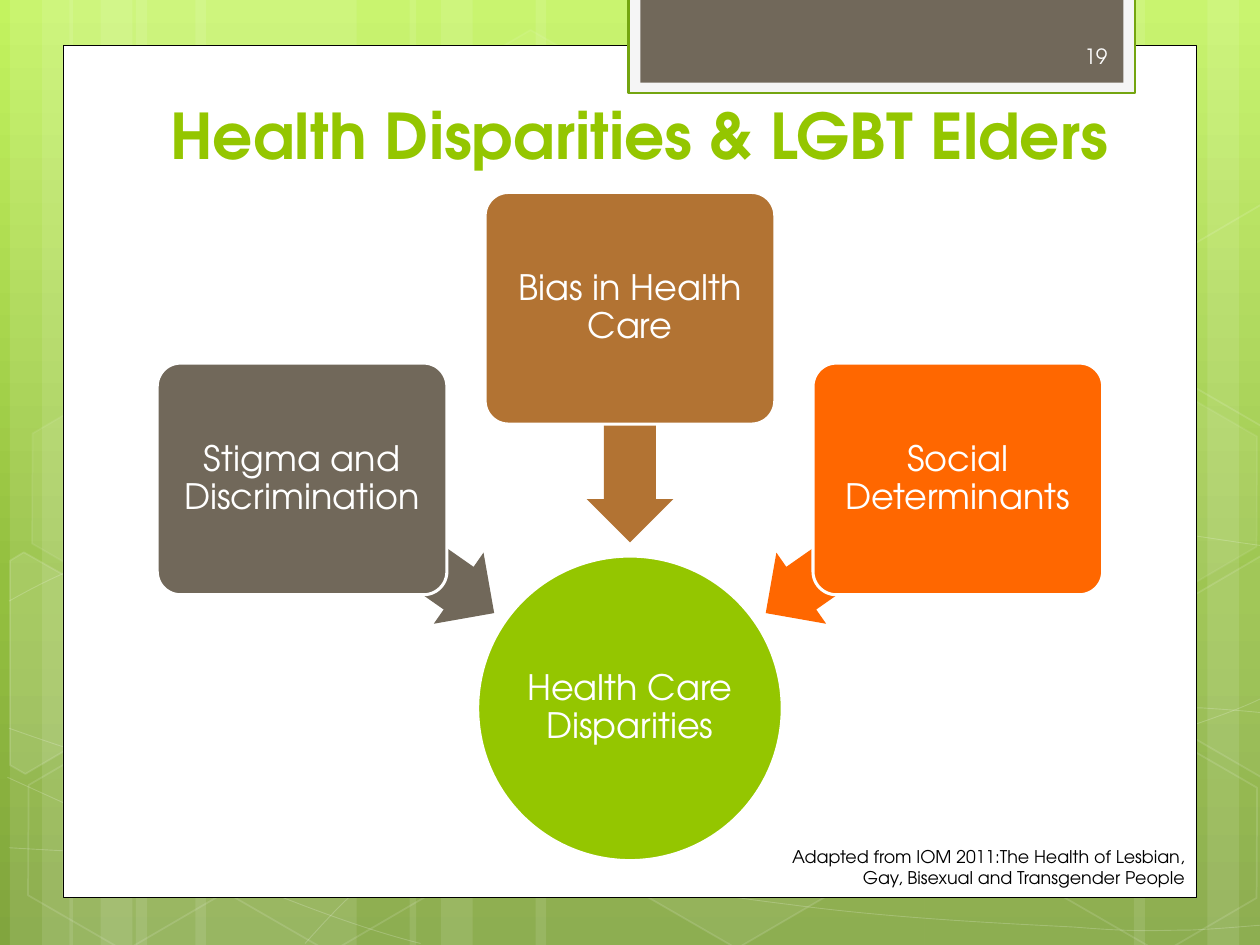
import copy
import math

import lxml.etree
import pptx
import pptx.dml.color
import pptx.enum.shapes
import pptx.enum.text
import pptx.oxml.ns
import pptx.util

Cm = pptx.util.Cm
Pt = pptx.util.Pt
SHAPE = pptx.enum.shapes.MSO_SHAPE
ALIGN = pptx.enum.text.PP_ALIGN
ANCHOR = pptx.enum.text.MSO_ANCHOR
qn = pptx.oxml.ns.qn

FONT = "TeX Gyre Adventor"
COLORS = {
    "white": "FFFFFF", "black": "000000", "number": "FEFEFE",
    "tab": "F5F5F5", "tab_line": "74A510", "green": "94C600",
    "taupe": "71685A", "brown": "B27333", "orange": "FF6700",
    "sky_top": "C3F35F", "sky_middle": "93BF3F", "sky_bottom": "81A53E",
}
WIDTH, HEIGHT, CENTER = 25.4, 19.05, 12.7
TILT = 30

# Left edge and width of each translucent vertical band
BANDS = [
    (2.74, 4.45), (0.2, 1.27), (0.85, 2.12), (3.94, 4.45), (1.4, 1.27), (2.03, 2.12),
    (18.63, 4.45), (24.34, 1.27), (22.86, 2.12), (10.8, 7.83), (8.26, 1.27), (8.89, 2.12),
]
# Bezier points: a start, then two controls and an end for each segment
CURVES = [
    [(0.18, 17.09), (1.55, 17.17), (2.92, 17.25), (4.83, 17.22), (6.73, 17.2),
     (9.09, 17.15), (11.63, 16.89), (14.17, 16.64), (17.78, 16.15), (20.12, 15.67),
     (22.43, 15.19), (24.82, 14.43), (25.58, 14)],
    [(0.18, 12.12), (0.91, 11.71), (1.65, 11.33), (3.07, 10.95), (4.52, 10.57),
     (6.58, 10.01), (8.81, 9.83), (11.07, 9.65), (13.82, 9.63), (16.61, 9.83),
     (19.41, 10.03), (24.05, 10.82), (25.58, 11.02)],
    [(0.15, 15.67), (3.23, 17.07), (6.27, 18.47), (8.48, 19.02)],
    [(0.18, 14.68), (0.97, 14.96), (1.78, 15.24), (3.25, 15.65), (4.72, 16.03),
     (6.93, 16.66), (9.07, 17.09), (11.18, 17.53), (13.84, 17.98), (15.95, 18.24),
     (18.06, 18.52), (20.32, 18.62), (21.67, 18.69), (22.99, 18.8), (23.34, 18.75),
     (24, 18.75), (24.66, 18.72), (25.12, 18.67), (25.58, 18.64)],
    [(6.15, 19.02), (6.6, 18.52), (7.06, 18.01), (7.67, 17.55), (8.28, 17.09),
     (9.14, 16.59), (9.86, 16.23), (10.57, 15.88), (11, 15.72), (11.94, 15.47),
     (12.85, 15.21), (14.55, 14.86), (15.44, 14.68), (16.36, 14.5), (16.48, 14.5),
     (17.27, 14.45), (18.06, 14.38), (19.3, 14.3), (20.17, 14.27), (21.06, 14.25),
     (22.5, 14.27), (22.5, 14.27), (23, 14.27), (23.6, 14.27), (24.21, 14.27),
     (24.66, 14.3), (25.1, 14.33), (25.55, 14.38)],
]
# Left, top, fill opacity and line opacity of each hexagon
HEXAGONS = [
    (8.48, 0.91, 4, 8), (12.62, 14.96, 6, 12), (0.28, 15.01, 0, 12),
    (0.36, 7.92, 7, 8), (4.42, 15.04, 0, 12), (19.13, 11.51, 10, 12),
    (21.18, 15.06, 0, 12), (21.18, 7.98, 7, 8),
]
# Hexagons cut by the slide's edge: corners, centre of rotation and fill opacity
LEFT_CUT = [(0.2, 11.3), (0.48, 11.13), (2.44, 12.24), (2.41, 14.48), (0.51, 15.6), (0.2, 15.42)]
RIGHT_CUT = [(23.52, 12.32), (25.43, 11.2), (25.63, 11.33), (25.63, 15.57),
             (25.45, 15.67), (23.52, 14.55)]
CUT_HEXAGONS = [
    (LEFT_CUT, (0.91, 13.59), 10),
    (RIGHT_CUT, (25.02, 13.21), 4),
    ([(x, y - 7.08) for x, y in RIGHT_CUT], (25.02, 6.13), 0),
]
# Column relative to the centre, box top, arrow top, colour and text of each cause
CAUSES = [
    (-1, 7.32, 10.13, "taupe", "Stigma and Discrimination"),
    (0, 3.88, 7.7, "brown", "Bias in Health Care"),
    (1, 7.32, 10.13, "orange", "Social Determinants"),
]


def rgb(name):
    return pptx.dml.color.RGBColor.from_string(COLORS[name])


def paint(fill, color, opacity=100):
    """Fill with a named colour; no colour or no opacity leaves it empty."""
    if not color or not opacity:
        fill.background()
        return
    fill.solid()
    fill.fore_color.rgb = rgb(color)
    if opacity < 100:
        color_element = fill._xPr.find(qn("a:solidFill"))[0]
        lxml.etree.SubElement(color_element, qn("a:alpha"), val=str(opacity * 1000))


def write(shape, text, size, color="white", bold=False, align=ALIGN.LEFT,
          anchor=ANCHOR.MIDDLE, spacing=None, margins=(0.25, 0.13, 0.25, 0.13)):
    frame = shape.text_frame
    frame.word_wrap = True
    frame.auto_size = pptx.enum.text.MSO_AUTO_SIZE.NONE
    frame.vertical_anchor = anchor
    (frame.margin_left, frame.margin_top,
     frame.margin_right, frame.margin_bottom) = map(Cm, margins)
    paragraph = frame.paragraphs[0]
    paragraph.alignment = align
    paragraph.line_spacing = spacing
    run = paragraph.add_run()
    run.text = text
    run.font.name, run.font.size, run.font.bold = FONT, Pt(size), bold
    run.font.color.rgb = rgb(color)


def turn(points, center, degrees):
    cosine, sine = math.cos(math.radians(degrees)), math.sin(math.radians(degrees))
    offsets = [(x - center[0], y - center[1]) for x, y in points]
    return [(center[0] + x * cosine - y * sine, center[1] + x * sine + y * cosine)
            for x, y in offsets]


class SlideBuilder:
    def __init__(self, presentation):
        self.slide = presentation.slides.add_slide(presentation.slide_layouts[5])

    def style(self, shape, fill, opacity, line, line_width, line_opacity, rotation=0):
        shape.shadow.inherit = False
        shape.rotation = rotation
        paint(shape.fill, fill, opacity)
        paint(shape.line.fill, line, line_opacity)
        if line:
            shape.line.width = Pt(line_width)
        return shape

    def shape(self, kind, left, top, width, height, fill, opacity=100, line=None,
              line_width=1, line_opacity=100, rotation=0, adjustments=()):
        shape = self.slide.shapes.add_shape(kind, Cm(left), Cm(top), Cm(width), Cm(height))
        for index, value in enumerate(adjustments):
            shape.adjustments[index] = value
        return self.style(shape, fill, opacity, line, line_width, line_opacity, rotation)

    def outline(self, points, closed):
        points = [(Cm(x), Cm(y)) for x, y in points]
        builder = self.slide.shapes.build_freeform(*points[0])
        builder.add_line_segments(points[1:], close=closed)
        return builder.convert_to_shape()

    def curve(self, points):
        shape = self.outline(points, closed=False)
        lines = shape._element.xpath(".//a:lnTo")
        for first in range(0, len(lines), 3):
            bezier = lxml.etree.Element(qn("a:cubicBezTo"))
            lines[first].addprevious(bezier)
            for line in lines[first:first + 3]:
                bezier.append(line[0])
                line.getparent().remove(line)
        self.style(shape, None, 0, "white", 0.5, 20)

    def cut_hexagon(self, corners, center, opacity):
        shape = self.outline(turn(corners, center, -TILT), closed=True)
        self.style(shape, "white", opacity, "white", 1, 12, TILT)

    def text(self, text, left, top, width, height, **text_format):
        box = self.slide.shapes.add_textbox(Cm(left), Cm(top), Cm(width), Cm(height))
        write(box, text, **text_format)

    def title(self, text, left, top, width, height, **text_format):
        title = self.slide.shapes.title
        title.left, title.top, title.width, title.height = map(Cm, (left, top, width, height))
        write(title, text, **text_format)

    def background(self, stops):
        fill = self.slide.background.fill
        fill.gradient()
        fill.gradient_angle = 270
        stop_list = self.slide._element.xpath(".//p:bg//a:gsLst")[0]
        stop_list.append(copy.deepcopy(stop_list[0]))
        for stop, (position, color) in zip(fill.gradient_stops, stops):
            stop.position = position
            stop.color.rgb = rgb(color)

    def move_to_layout(self):
        """Move everything but the placeholder to the layout, behind the content."""
        layout_tree = self.slide.slide_layout.shapes._spTree
        for shape in list(self.slide.shapes):
            if not shape.is_placeholder:
                layout_tree.append(shape._element)


def draw_backdrop(builder):
    builder.background([(0, "sky_top"), (0.62, "sky_middle"), (1, "sky_bottom")])
    for left, width in BANDS:
        builder.shape(SHAPE.RECTANGLE, left, 0, width, HEIGHT, "white", opacity=10)
    for curve in CURVES:
        builder.curve(curve)
    for left, top, opacity, line_opacity in HEXAGONS:
        builder.shape(SHAPE.HEXAGON, left, top, 4.45, 3.86, "white", opacity, "white",
                      line_opacity=line_opacity, rotation=TILT, adjustments=[0.285])
    for cut in CUT_HEXAGONS:
        builder.cut_hexagon(*cut)
    builder.shape(SHAPE.RECTANGLE, 1.27, 0.91, 22.86, 17.18, "white", line="black", line_width=0.5)
    builder.shape(SHAPE.RECTANGLE, 12.67, -0.05, 10.21, 1.93, "tab", line="tab_line", line_width=1.25)
    builder.shape(SHAPE.RECTANGLE, 12.91, -0.05, 9.74, 1.72, "taupe")
    builder.move_to_layout()


def draw_diagram(builder):
    label = {"size": 20, "align": ALIGN.CENTER, "spacing": 0.9}
    border = {"line": "white", "line_width": 1.75}
    circle = builder.shape(SHAPE.OVAL, CENTER - 3.07, 11.21, 6.14, 6.14, "green", **border)
    write(circle, "Health Care Disparities", margins=(0.03,) * 4, **label)
    for column, box_top, arrow_top, color, text in CAUSES:
        builder.shape(SHAPE.LEFT_ARROW, CENTER + column * 4.67 - 2.36, arrow_top, 4.72, 1.75, color,
                      rotation=270 + column * 55, adjustments=[0.6, 0.5])
        box = builder.shape(SHAPE.ROUNDED_RECTANGLE, CENTER + column * 6.61 - 2.92, box_top,
                            5.84, 4.67, color, adjustments=[0.1], **border)
        write(box, text, margins=(0.1,) * 4, **label)


def main():
    presentation = pptx.Presentation()
    presentation.slide_width, presentation.slide_height = Cm(WIDTH), Cm(HEIGHT)
    builder = SlideBuilder(presentation)
    draw_backdrop(builder)
    builder.title("Health Disparities & LGBT Elders", 3.18, 2.54, 19.51, 1.07, size=36,
                  color="green", bold=True, anchor=ANCHOR.BOTTOM, margins=(0.25, 0.13, 0, 0.13))
    builder.text("19", 16.66, 0.62, 5.92, 1.02, size=12, color="number", align=ALIGN.RIGHT)
    draw_diagram(builder)
    builder.text("Adapted from IOM 2011:The Health of Lesbian, Gay, Bisexual and Transgender People",
                 15.44, 16.92, 8.69, 1.12, size=10, color="black", align=ALIGN.RIGHT,
                 anchor=ANCHOR.TOP)
    presentation.save("out.pptx")


if __name__ == "__main__":
    main()
